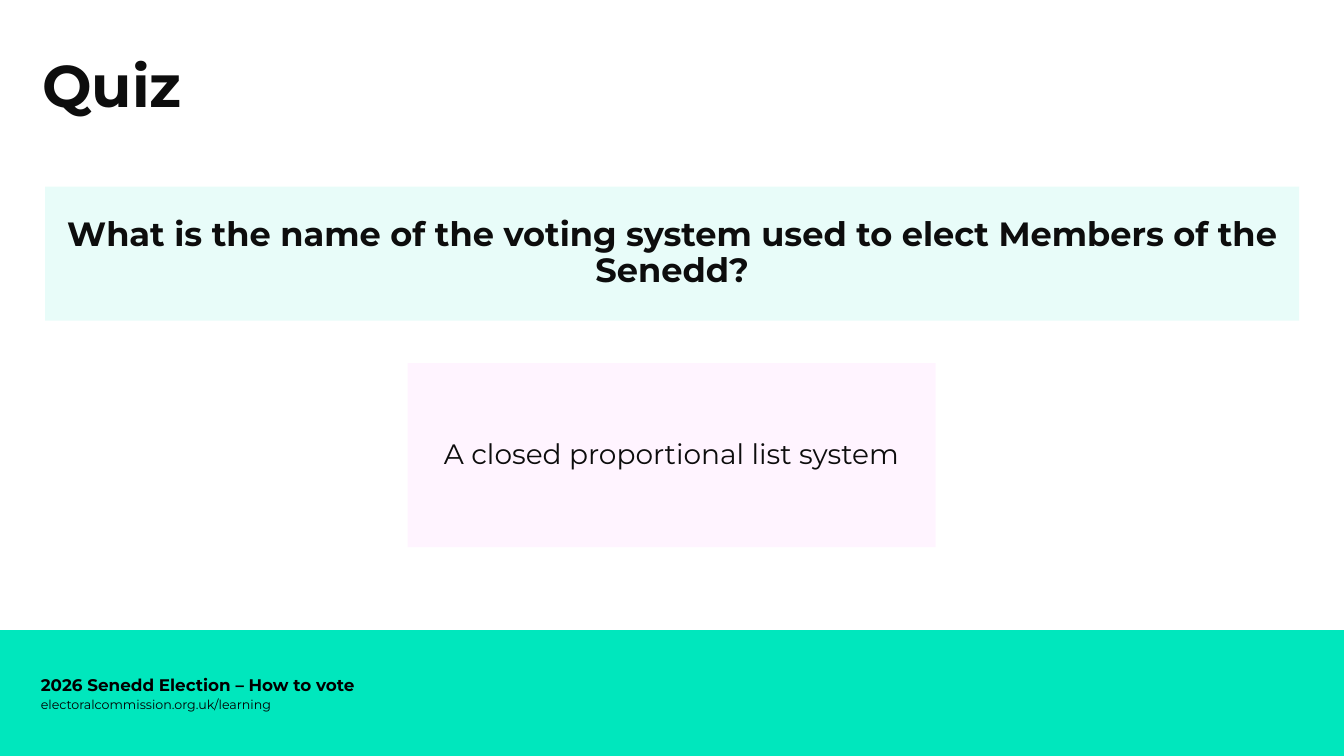
from dataclasses import dataclass

from lxml.etree import SubElement
from pptx import Presentation
from pptx.dml.color import RGBColor
from pptx.enum.shapes import MSO_SHAPE
from pptx.enum.text import MSO_ANCHOR as Anchor
from pptx.enum.text import MSO_AUTO_SIZE as AutoSize
from pptx.enum.text import PP_ALIGN as Align
from pptx.oxml.ns import qn
from pptx.util import Cm, Pt

FONT = "Montserrat"
INK = "0D0D0D"
BLACK = "000000"
GREEN = "00E7BD"
PINK = "FF8BFF"
SLIDE_WIDTH, SLIDE_HEIGHT = 33.87, 19.05
BAND_HEIGHT = 3.17


@dataclass(frozen=True)
class Box:
    """A rectangle in centimetres."""
    left: float
    top: float
    width: float
    height: float


@dataclass(frozen=True)
class Wording:
    text: str
    size: float
    bold: bool = False
    color: str = INK
    align: Align = Align.LEFT
    anchor: Anchor = Anchor.MIDDLE
    line_spacing: float = 1.0


@dataclass(frozen=True)
class Panel:
    placeholder: int
    box: Box
    tint: str
    wording: Wording


@dataclass(frozen=True)
class FooterLine:
    box: Box
    wording: Wording


TITLE_BOX = Box(0.81, 1.3, 21.36, 3.05)
TITLE = Wording("Quiz", 42, True, anchor=Anchor.TOP, line_spacing=0.9)

PANELS = [
    Panel(1, Box(1.14, 4.7, 31.6, 3.38), GREEN,
          Wording("What is the name of the voting system used to elect "
                  "Members of the Senedd?", 24, True,
                  align=Align.CENTER, line_spacing=0.9)),
    Panel(2, Box(10.27, 9.15, 13.31, 4.64), PINK,
          Wording("A closed proportional list system", 20,
                  align=Align.CENTER, line_spacing=0.9)),
]

FOOTER_LINES = [
    FooterLine(Box(0.78, 17.25, 19.43, 1.02),
               Wording("electoralcommission.org.uk/learning", 9, color=BLACK)),
    FooterLine(Box(0.78, 16.74, 19.43, 1.02),
               Wording("2026 Senedd Election – How to vote", 12, True, BLACK)),
]


def rgb(value: str) -> RGBColor:
    return RGBColor.from_string(value)


def lengths(box: Box) -> tuple:
    return Cm(box.left), Cm(box.top), Cm(box.width), Cm(box.height)


def place(shape, box: Box) -> None:
    shape.left, shape.top, shape.width, shape.height = lengths(box)


def write(frame, wording: Wording) -> None:
    frame.word_wrap = True
    frame.auto_size = AutoSize.NONE
    frame.vertical_anchor = wording.anchor
    paragraph = frame.paragraphs[0]
    paragraph.alignment = wording.align
    paragraph.line_spacing = wording.line_spacing
    paragraph.space_before = Pt(0)
    run = paragraph.add_run()
    run.text = wording.text
    font = run.font
    font.name, font.size, font.bold = FONT, Pt(wording.size), wording.bold
    font.color.rgb = rgb(wording.color)


def remove_bullet(paragraph) -> None:
    properties = paragraph._p.get_or_add_pPr()
    properties.set("marL", "0")
    properties.set("indent", "0")
    SubElement(properties, qn("a:buNone"))


def fill_tint(shape, color: str, opacity: int) -> None:
    """Fill with a colour at an opacity given in percent."""
    shape.fill.solid()
    shape.fill.fore_color.rgb = rgb(color)
    color_element = shape._element.spPr.find(qn("a:solidFill"))[0]
    SubElement(color_element, qn("a:alpha")).set("val", str(opacity * 1000))


def draw_panel(slide, panel: Panel) -> None:
    body = slide.placeholders[panel.placeholder]
    place(body, panel.box)
    fill_tint(body, panel.tint, 9)
    frame = body.text_frame
    frame.margin_left = frame.margin_right = Cm(0.5)
    frame.margin_top = frame.margin_bottom = Cm(0.5)
    remove_bullet(frame.paragraphs[0])
    write(frame, panel.wording)


def draw_footer(slide) -> None:
    band_box = Box(0, SLIDE_HEIGHT - BAND_HEIGHT, SLIDE_WIDTH, BAND_HEIGHT)
    band = slide.shapes.add_shape(MSO_SHAPE.RECTANGLE, *lengths(band_box))
    band.shadow.inherit = False
    band.fill.solid()
    band.fill.fore_color.rgb = rgb(GREEN)
    band.line.fill.background()
    for line in FOOTER_LINES:
        label = slide.shapes.add_textbox(*lengths(line.box))
        write(label.text_frame, line.wording)


def main() -> None:
    deck = Presentation()
    deck.slide_width, deck.slide_height = Cm(SLIDE_WIDTH), Cm(SLIDE_HEIGHT)
    two_content = deck.slide_layouts[3]
    slide = deck.slides.add_slide(two_content)

    title = slide.shapes.title
    place(title, TITLE_BOX)
    write(title.text_frame, TITLE)
    for panel in PANELS:
        draw_panel(slide, panel)
    draw_footer(slide)

    deck.save("out.pptx")


if __name__ == "__main__":
    main()
